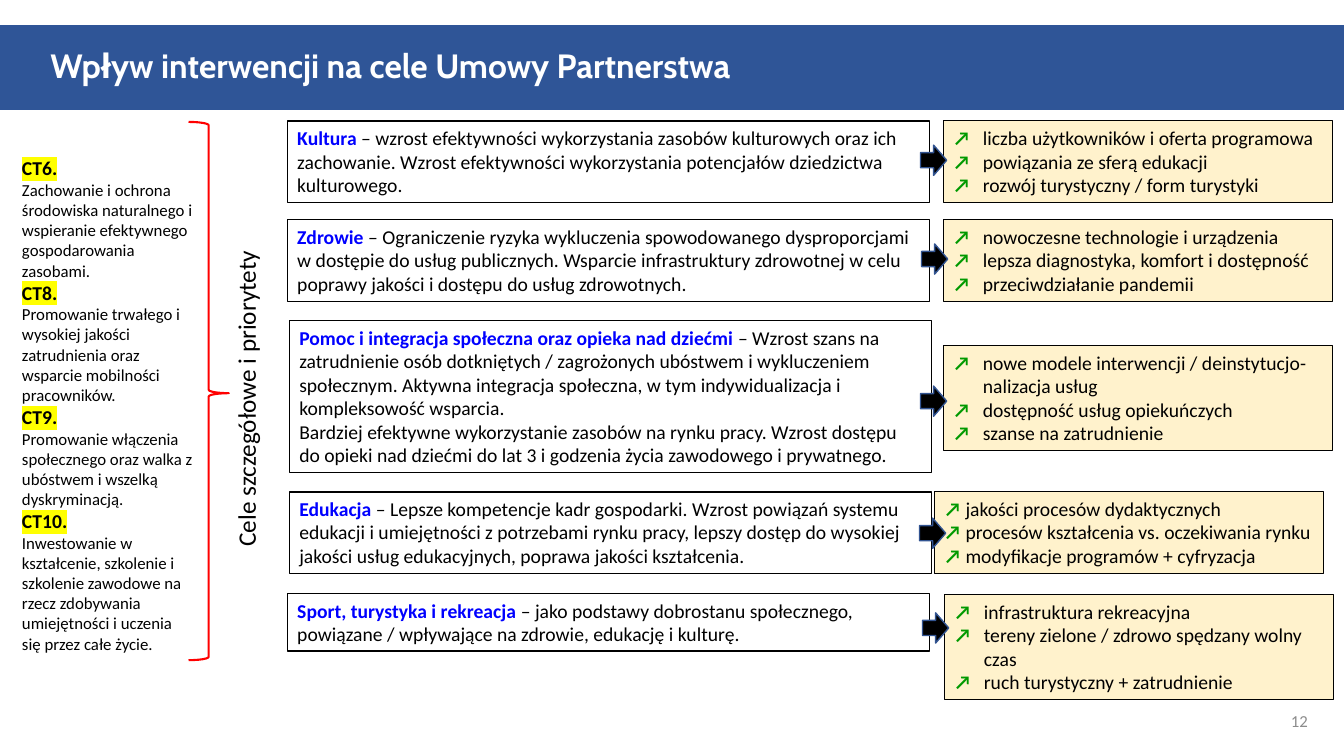
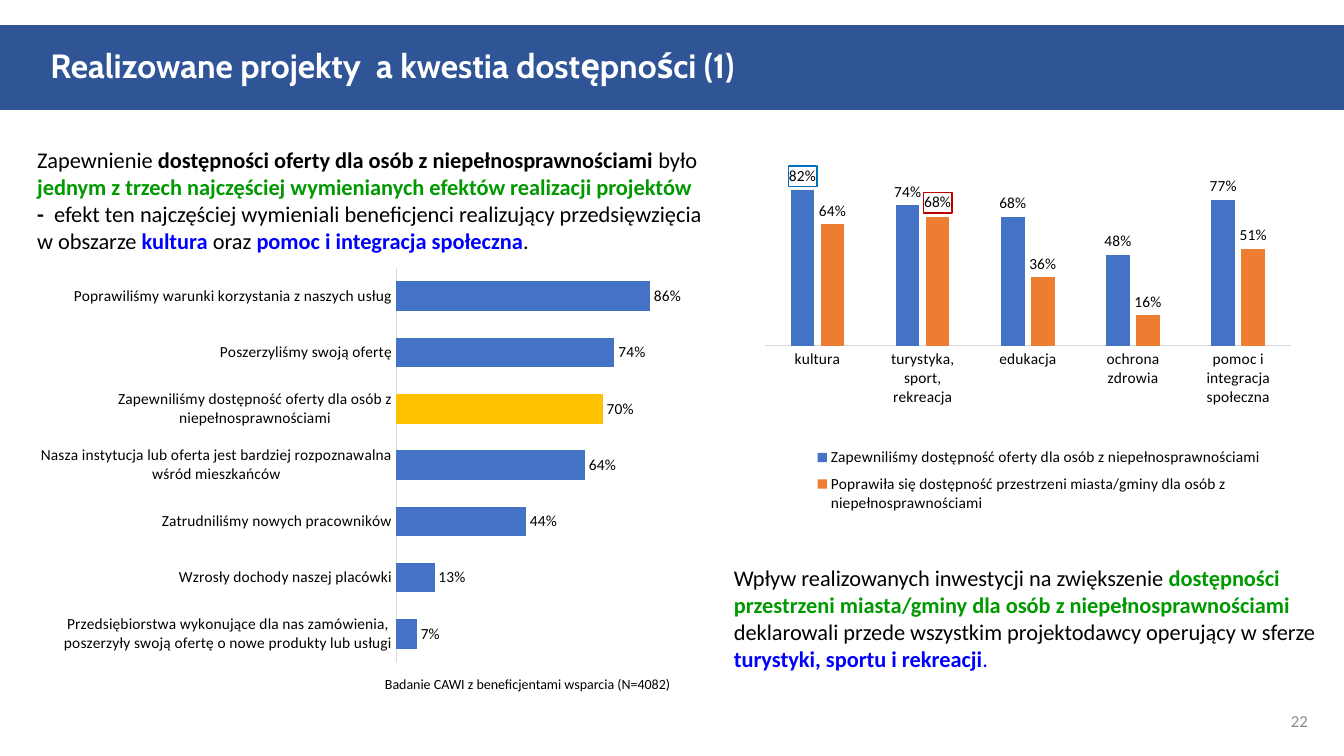
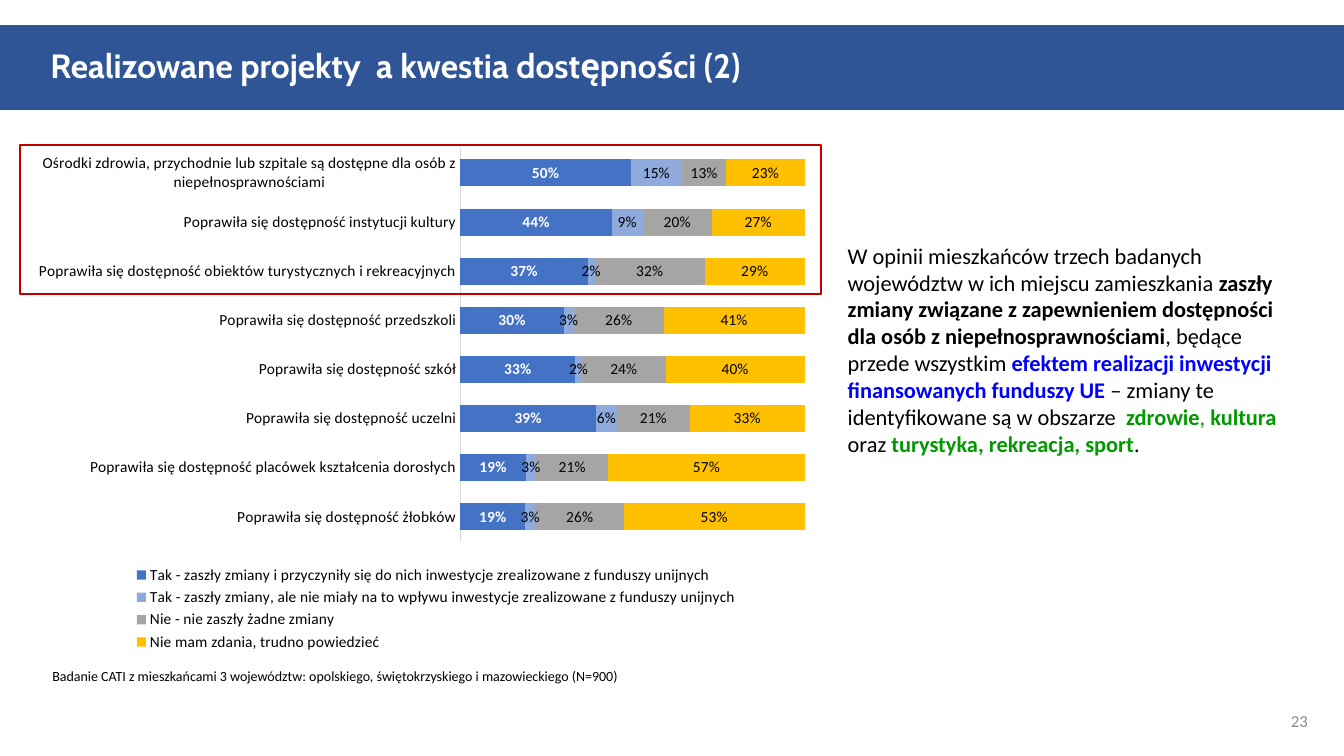
from dataclasses import dataclass

from lxml.etree import SubElement
from pptx import Presentation
from pptx.chart.data import CategoryChartData
from pptx.dml.color import RGBColor
from pptx.enum.chart import XL_CHART_TYPE, XL_LABEL_POSITION, XL_LEGEND_POSITION, XL_TICK_MARK
from pptx.enum.shapes import MSO_SHAPE
from pptx.enum.text import MSO_ANCHOR, MSO_AUTO_SIZE, PP_ALIGN
from pptx.oxml import parse_xml
from pptx.oxml.ns import nsdecls, qn
from pptx.util import Inches, Pt


@dataclass(frozen=True)
class Theme:
    heading_font: str = "Cabin"
    body_font: str = "Calibri"
    band: str = "2F5597"
    white: str = "FFFFFF"
    ink: str = "000000"
    grey: str = "8C8C8C"
    topic: str = "0000FF"
    accent: str = "009900"
    marker: str = "FFFF00"
    effect_fill: str = "FFF2CC"
    brace: str = "FF0000"
    frame: str = "C00000"
    label_frame: str = "0070C0"
    arrow_line: str = "325491"
    axis: str = "D9D9D9"
    blue: str = "4472C4"
    light_blue: str = "8FAADC"
    orange: str = "ED7D31"
    silver: str = "A5A5A5"
    gold: str = "FFC000"
    title_size: int = 24
    side_size: int = 18
    lead_size: int = 16
    box_size: int = 14
    small_size: int = 12
    chart_size: int = 11
    note_size: int = 10


T = Theme()
WIDTH, HEIGHT = 13.33, 7.5

# Run styles: colour, bold
PLAIN, BOLD = (T.ink, False), (T.ink, True)
TOPIC, ACCENT = (T.topic, True), (T.accent, True)
TAG = (T.ink, True, T.marker, T.box_size)

# ---------- Content: goals of the partnership ----------
GOALS = [
    ("CT6.", "Zachowanie i ochrona środowiska naturalnego i wspieranie efektywnego gospodarowania zasobami."),
    ("CT8.", "Promowanie trwałego i wysokiej jakości zatrudnienia oraz wsparcie mobilności pracowników."),
    ("CT9.", "Promowanie włączenia społecznego oraz walka z ubóstwem i wszelką dyskryminacją."),
    ("CT10.", "Inwestowanie w kształcenie, szkolenie i szkolenie zawodowe na rzecz zdobywania umiejętności "
              "i uczenia się przez całe życie."),
]

# area, description, (left, top, height) of area, effects, (left, top, height) of effects, arrow corner
AREAS = [
    ("Kultura",
     [" – wzrost efektywności wykorzystania zasobów kulturowych oraz ich zachowanie. "
      "Wzrost efektywności wykorzystania potencjałów dziedzictwa kulturowego."],
     (2.85, 1.2, 0.81),
     ["liczba użytkowników i oferta programowa", "powiązania ze sferą edukacji",
      "rozwój turystyczny / form turystyki"],
     (9.36, 1.2, 0.81), (9.13, 1.44)),
    ("Zdrowie",
     [" – Ograniczenie ryzyka wykluczenia spowodowanego dysproporcjami w dostępie do usług publicznych. "
      "Wsparcie infrastruktury zdrowotnej w celu poprawy jakości i dostępu do usług zdrowotnych."],
     (2.85, 2.18, 0.81),
     ["nowoczesne technologie i urządzenia", "lepsza diagnostyka, komfort i dostępność",
      "przeciwdziałanie pandemii"],
     (9.36, 2.18, 0.81), (9.14, 2.42)),
    ("Pomoc i integracja społeczna oraz opieka nad dziećmi",
     [" – Wzrost szans na zatrudnienie osób dotkniętych / zagrożonych ubóstwem i wykluczeniem społecznym. "
      "Aktywna integracja społeczna, w tym indywidualizacja i kompleksowość wsparcia.",
      "Bardziej efektywne wykorzystanie zasobów na rynku pracy. Wzrost dostępu do opieki nad dziećmi "
      "do lat 3 i godzenia życia zawodowego i prywatnego."],
     (2.87, 3.18, 1.51),
     ["nowe modele interwencji / deinstytucjo-nalizacja usług", "dostępność usług opiekuńczych",
      "szanse na zatrudnienie"],
     (9.36, 3.43, 1.04), (9.13, 3.83)),
    ("Edukacja",
     [" – Lepsze kompetencje kadr gospodarki. Wzrost powiązań systemu edukacji i umiejętności z potrzebami "
      "rynku pracy, lepszy dostęp do wysokiej jakości usług edukacyjnych, poprawa jakości kształcenia."],
     (2.87, 4.88, 0.81),
     ["jakości procesów dydaktycznych", "procesów kształcenia vs. oczekiwania rynku",
      "modyfikacje programów + cyfryzacja"],
     (9.27, 4.88, 0.81), (9.12, 5.14)),
    ("Sport, turystyka i rekreacja",
     [" – jako podstawy dobrostanu społecznego, powiązane / wpływające na zdrowie, edukację i kulturę."],
     (2.85, 5.89, 0.57),
     ["infrastruktura rekreacyjna", "tereny zielone / zdrowo spędzany wolny czas",
      "ruch turystyczny + zatrudnienie"],
     (9.37, 5.9, 1.04), (9.15, 6.08)),
]
UNINDENTED = "Edukacja"
AREA_WIDTH, EFFECT_WIDTH, HANG = 6.37, 3.86, 0.29

# ---------- Content: accessibility ----------
OFFER_LEAD = [
    ("Zapewnienie ", PLAIN), ("dostępności oferty dla osób z niepełnosprawnościami ", BOLD), ("było ", PLAIN),
    ("jednym z trzech najczęściej wymienianych efektów realizacji projektów ", ACCENT), ("-  ", BOLD),
    ("efekt ten najczęściej wymieniali beneficjenci realizujący przedsięwzięcia w obszarze ", PLAIN),
    ("kultura", TOPIC), (" oraz ", PLAIN), ("pomoc i integracja społeczna", TOPIC), (".", PLAIN),
]
SPACE_LEAD = [
    ("Wpływ realizowanych inwestycji na zwiększenie ", PLAIN),
    ("dostępności przestrzeni miasta/gminy dla osób z niepełnosprawnościami ", ACCENT),
    ("deklarowali przede wszystkim projektodawcy operujący w sferze ", PLAIN),
    ("turystyki, sportu i rekreacji", TOPIC), (".", (T.topic, False)),
]
RESIDENTS_LEAD = [
    ("W opinii mieszkańców trzech badanych województw w ich miejscu zamieszkania ", PLAIN),
    ("zaszły zmiany związane z zapewnieniem dostępności dla osób z niepełnosprawnościami", BOLD),
    (", będące przede wszystkim ", PLAIN),
    ("efektem realizacji inwestycji finansowanych funduszy UE ", TOPIC),
    ("– zmiany te identyfikowane są w obszarze  ", PLAIN),
    ("zdrowie", ACCENT), (", ", (T.accent, False)), ("kultura", ACCENT), (" oraz ", PLAIN),
    ("turystyka, rekreacja, sport", ACCENT), (".", PLAIN),
]

EFFECT_SHARES = {
    "Poprawiliśmy warunki korzystania z naszych usług": 0.86,
    "Poszerzyliśmy swoją ofertę": 0.74,
    "Zapewniliśmy dostępność oferty dla osób z niepełnosprawnościami": 0.7,
    "Nasza instytucja lub oferta jest bardziej rozpoznawalna wśród mieszkańców": 0.64,
    "Zatrudniliśmy nowych pracowników": 0.44,
    "Wzrosły dochody naszej placówki": 0.13,
    "Przedsiębiorstwa wykonujące dla nas zamówienia, poszerzyły swoją ofertę o nowe produkty lub usługi": 0.07,
}
HIGHLIGHTED_EFFECT = 2

SECTORS = ["kultura", "turystyka, sport, rekreacja", "edukacja", "ochrona zdrowia",
           "pomoc i integracja społeczna"]
SECTOR_SERIES = [
    ("Zapewniliśmy dostępność oferty dla osób z niepełnosprawnościami", [0.82, 0.74, 0.68, 0.48, 0.77], T.blue),
    ("Poprawiła się dostępność przestrzeni miasta/gminy dla osób z niepełnosprawnościami",
     [0.64, 0.68, 0.36, 0.16, 0.51], T.orange),
]
# series, point, frame colour
FRAMED_LABELS = [(0, 0, T.label_frame), (1, 1, T.frame)]

FACILITIES = ["Ośrodki zdrowia, przychodnie lub szpitale są dostępne dla osób z niepełnosprawnościami"] + [
    "Poprawiła się dostępność " + place for place in (
        "instytucji kultury", "obiektów turystycznych i rekreacyjnych", "przedszkoli", "szkół", "uczelni",
        "placówek kształcenia dorosłych", "żłobków")]
OPINION_SERIES = [
    ("Tak - zaszły zmiany i przyczyniły się do nich inwestycje zrealizowane z funduszy unijnych",
     [0.5, 0.44, 0.37, 0.3, 0.33, 0.39, 0.19, 0.19], T.blue),
    ("Tak - zaszły zmiany, ale nie miały na to wpływu inwestycje zrealizowane z funduszy unijnych",
     [0.15, 0.09, 0.02, 0.03, 0.02, 0.06, 0.03, 0.03], T.light_blue),
    ("Nie - nie zaszły żadne zmiany", [0.13, 0.2, 0.32, 0.26, 0.24, 0.21, 0.21, 0.26], T.silver),
    ("Nie mam zdania, trudno powiedzieć", [0.23, 0.27, 0.29, 0.41, 0.4, 0.33, 0.57, 0.53], T.gold),
]


# ---------- Text and shapes ----------
def rgb(colour):
    return RGBColor.from_string(colour)


def inches(at):
    return [Inches(length) for length in at]


def style_font(font, size, colour, bold=False, face=T.body_font):
    font.size, font.bold, font.name = Pt(size), bold, face
    font.color.rgb = rgb(colour)


def add_run(paragraph, text, size, colour, bold, marker=None, own_size=None, face=T.body_font):
    run = paragraph.add_run()
    run.text = text
    style_font(run.font, own_size or size, colour, bold, face)
    if marker:
        properties = run._r.get_or_add_rPr()
        highlight = SubElement(properties, qn("a:highlight"))
        SubElement(highlight, qn("a:srgbClr")).set("val", marker)
        properties.find(qn("a:solidFill")).addnext(highlight)


def write(frame, paragraphs, size, align=PP_ALIGN.LEFT, anchor=MSO_ANCHOR.TOP, after=0, left=0, first=0,
          face=T.body_font):
    frame.word_wrap, frame.vertical_anchor = True, anchor
    for index, runs in enumerate(paragraphs):
        paragraph = frame.paragraphs[0] if index == 0 else frame.add_paragraph()
        paragraph.alignment = align
        paragraph.space_after = Pt(after)
        if left:
            properties = paragraph._p.get_or_add_pPr()
            properties.set("marL", str(Inches(left)))
            properties.set("indent", str(Inches(first)))
        for text, style in runs:
            add_run(paragraph, text, size, *style, face=face)


def add_text(slide, at, paragraphs, size, **options):
    frame = slide.shapes.add_textbox(*inches(at)).text_frame
    write(frame, paragraphs, size, **options)
    return frame


def add_figure(slide, kind, at, line, weight, fill=None):
    figure = slide.shapes.add_shape(kind, *inches(at))
    figure.shadow.inherit = False
    if fill:
        figure.fill.solid()
        figure.fill.fore_color.rgb = rgb(fill)
    else:
        figure.fill.background()
    figure.line.color.rgb, figure.line.width = rgb(line), Pt(weight)
    return figure


def add_slide(deck, heading, number):
    slide = deck.slides.add_slide(deck.slide_layouts[5])
    title = slide.shapes.title
    title.left, title.top, title.width, title.height = inches((0, 0.25, WIDTH, 0.84))
    title.fill.solid()
    title.fill.fore_color.rgb = rgb(T.band)
    write(title.text_frame, [[(heading, (T.white, True))]], T.title_size, anchor=MSO_ANCHOR.MIDDLE,
          left=0.4, face=T.heading_font)
    title.text_frame.auto_size = MSO_AUTO_SIZE.NONE
    title.text_frame.paragraphs[0].line_spacing = 0.9
    add_text(slide, (12.42, 6.95, 0.65, 0.4), [[(number, (T.grey, False))]], T.small_size,
             align=PP_ALIGN.RIGHT, anchor=MSO_ANCHOR.MIDDLE)
    return slide


# ---------- Charts ----------
def manual_layout(area, inner=False):
    target = '<c:layoutTarget val="inner"/>' if inner else ""
    modes = "".join(f'<c:{side}Mode val="edge"/>' for side in "xy")
    sizes = "".join(f'<c:{side} val="{share}"/>' for side, share in zip("xywh", area))
    return parse_xml(f'<c:layout {nsdecls("c")}><c:manualLayout>{target}{modes}{sizes}'
                     '</c:manualLayout></c:layout>')


def add_bars(slide, kind, at, categories, series_list, gap, overlap, top_value,
             plot_area=None, legend_area=None):
    data = CategoryChartData(number_format="0%")
    data.categories = categories
    for name, values, _ in series_list:
        data.add_series(name, values)
    chart = slide.shapes.add_chart(kind, *inches(at), data).chart
    chart.has_title = False
    style_font(chart.font, T.chart_size, T.ink)

    # Axes
    axis = chart.category_axis
    axis.major_tick_mark = axis.minor_tick_mark = XL_TICK_MARK.NONE
    axis.format.line.color.rgb, axis.format.line.width = rgb(T.axis), Pt(0.75)
    axis.reverse_order = kind != XL_CHART_TYPE.COLUMN_CLUSTERED
    values_axis = chart.value_axis
    values_axis.has_major_gridlines = False
    values_axis.minimum_scale, values_axis.maximum_scale = 0, top_value
    values_axis.visible = False

    # Bars and their labels
    plot = chart.plots[0]
    plot.gap_width, plot.overlap, plot.vary_by_categories = gap, overlap, False
    stacked = kind == XL_CHART_TYPE.BAR_STACKED_100
    position = XL_LABEL_POSITION.CENTER if stacked else XL_LABEL_POSITION.OUTSIDE_END
    for index, (series, (_, _, colour)) in enumerate(zip(plot.series, series_list)):
        series.format.fill.solid()
        series.format.fill.fore_color.rgb = rgb(colour)
        labels = series.data_labels
        labels.show_value, labels.position = True, position
        labels.number_format, labels.number_format_is_linked = "0%", False
        on_dark = stacked and index == 0
        style_font(labels.font, T.chart_size, T.white if on_dark else T.ink, on_dark)

    # Legend and plot area
    chart.has_legend = legend_area is not None
    if chart.has_legend:
        legend = chart.legend
        legend.position, legend.include_in_layout = XL_LEGEND_POSITION.BOTTOM, False
        style_font(legend.font, T.chart_size, T.ink)
        legend._element.find(qn("c:legendPos")).addnext(manual_layout(legend_area))
    if plot_area:
        plot_box = chart._chartSpace.chart.plotArea
        for automatic in plot_box.findall(qn("c:layout")):
            plot_box.remove(automatic)
        plot_box.insert(0, manual_layout(plot_area, inner=True))
    return plot


def frame_label(series, point, colour):
    label = series.points[point].data_label
    style_font(label.font, T.chart_size, T.ink)
    label.position = XL_LABEL_POSITION.OUTSIDE_END
    text = series.data_labels._element.xpath(f"c:dLbl[c:idx/@val='{point}']/c:txPr")[0]
    text.addprevious(parse_xml(
        f'<c:spPr {nsdecls("c", "a")}><a:noFill/><a:ln w="{Pt(1)}"><a:solidFill>'
        f'<a:srgbClr val="{colour}"/></a:solidFill></a:ln></c:spPr>'))


# ---------- Slides ----------
def build_goals(deck):
    slide = add_slide(deck, "Wpływ interwencji na cele Umowy Partnerstwa", "12")
    goals = [[run] for tag, goal in GOALS for run in ((tag, TAG), (goal, PLAIN))]
    add_text(slide, (0.12, 1.5, 1.9, 5.08), goals, T.small_size)
    brace = add_figure(slide, MSO_SHAPE.RIGHT_BRACE, (1.87, 1.21, 0.4, 5.34), T.brace, 1.5)
    brace.adjustments[0], brace.adjustments[1] = 0.083, 0.504
    side = add_text(slide, (2.24, 2.37, 0.5, 3.17), [[("Cele szczegółowe i priorytety", PLAIN)]],
                    T.side_size, align=PP_ALIGN.CENTER)
    side._txBody.bodyPr.set("vert", "vert270")

    for area, description, (left, top, height), effects, effect_at, arrow_at in AREAS:
        box = add_figure(slide, MSO_SHAPE.RECTANGLE, (left, top, AREA_WIDTH, height), T.ink, 1)
        paragraphs = [[(text, PLAIN)] for text in description]
        paragraphs[0].insert(0, (area, TOPIC))
        write(box.text_frame, paragraphs, T.box_size)

        left, top, height = effect_at
        box = add_figure(slide, MSO_SHAPE.RECTANGLE, (left, top, EFFECT_WIDTH, height), T.ink, 0.75,
                         T.effect_fill)
        hang, gap = (0, " ") if area == UNINDENTED else (HANG, "\t")
        write(box.text_frame, [[("↗" + gap, ACCENT), (effect, PLAIN)] for effect in effects],
              T.box_size, left=hang, first=-hang)
        add_figure(slide, MSO_SHAPE.RIGHT_ARROW, (*arrow_at, 0.26, 0.3), T.arrow_line, 1, T.ink)


def build_projects(deck):
    slide = add_slide(deck, "Realizowane projekty  a kwestia dostępności (1)", "22")
    add_text(slide, (0.27, 1.4, 6.81, 1.18), [OFFER_LEAD], T.lead_size, after=3)
    add_text(slide, (7.18, 5.55, 6.03, 1.18), [SPACE_LEAD], T.lead_size, after=3)

    sectors = add_bars(slide, XL_CHART_TYPE.COLUMN_CLUSTERED, (7.42, 1.55, 5.55, 3.76), SECTORS,
                       SECTOR_SERIES, 219, -27, 0.9, (0.03, 0.05, 0.94, 0.45), (0.1, 0.75, 0.84, 0.21))
    for series, point, colour in FRAMED_LABELS:
        frame_label(sectors.series[series], point, colour)

    effects = add_bars(slide, XL_CHART_TYPE.BAR_CLUSTERED, (0.27, 2.58, 6.72, 4.07), list(EFFECT_SHARES),
                       [("Series 1", list(EFFECT_SHARES.values()), T.blue)], 90, 0, 1)
    highlight = effects.series[0].points[HIGHLIGHTED_EFFECT].format.fill
    highlight.solid()
    highlight.fore_color.rgb = rgb(T.gold)
    add_text(slide, (3.72, 6.65, 3.7, 0.28),
             [[("Badanie CAWI z beneficjentami wsparcia (N=4082)", PLAIN)]], T.note_size, after=3)


def build_residents(deck):
    slide = add_slide(deck, "Realizowane projekty  a kwestia dostępności (2)", "23")
    add_text(slide, (8.31, 2.35, 4.47, 2.26), [RESIDENTS_LEAD], T.lead_size, after=3)
    add_bars(slide, XL_CHART_TYPE.BAR_STACKED_100, (0.2, 1.37, 7.94, 5.13), FACILITIES, OPINION_SERIES,
             82, 100, 1, (0.55, 0.02, 0.43, 0.76), (0.12, 0.82, 0.8, 0.18))
    add_figure(slide, MSO_SHAPE.RECTANGLE, (0.2, 1.44, 7.94, 1.48), T.frame, 1.5)
    add_text(slide, (0.42, 6.57, 5.99, 0.27),
             [[("Badanie CATI z mieszkańcami 3 województw: opolskiego, świętokrzyskiego i mazowieckiego "
                "(N=900)", PLAIN)]], T.note_size, after=3)


def main():
    deck = Presentation()
    deck.slide_width, deck.slide_height = Inches(WIDTH), Inches(HEIGHT)
    for build in (build_goals, build_projects, build_residents):
        build(deck)
    deck.save("out.pptx")


if __name__ == "__main__":
    main()
